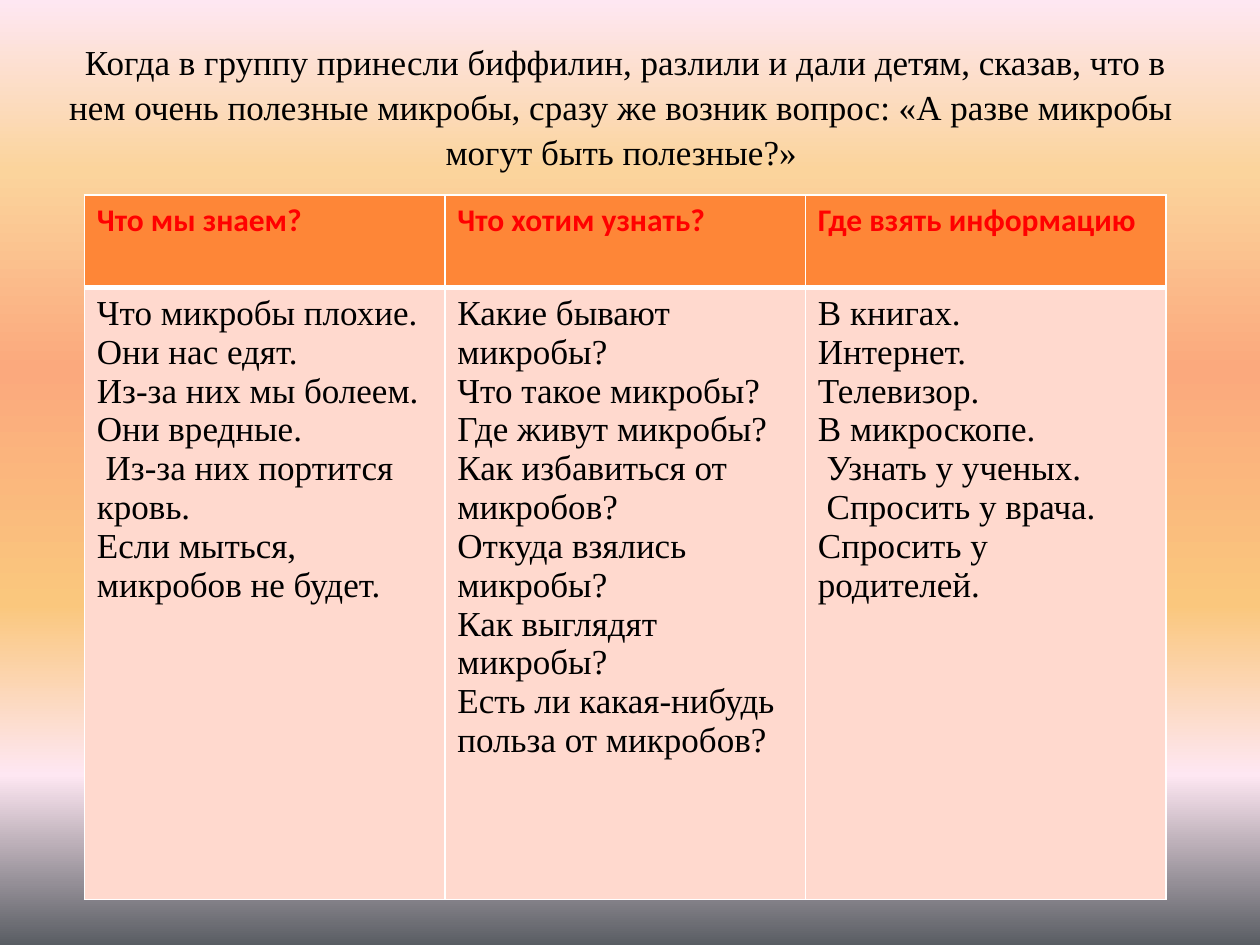
import pptx
import pptx.dml.color
import pptx.enum.text
import pptx.oxml
import pptx.oxml.ns
import pptx.util

Pt = pptx.util.Pt
qn = pptx.oxml.ns.qn

COLORS = {
    "black": "000000", "red": "FF0000", "white": "FFFFFF",
    "header": "FE8637", "body": "FFD9CE",
    "slate": "595D63", "pink": "FEE7F2", "gold": "FAC77D",
    "coral": "FBA97D", "sand": "FBD49C",
}
BACKGROUND = [(0, "slate"), (18, "pink"), (36, "gold"),
              (61, "coral"), (82, "sand"), (100, "pink")]
TITLE = ("Когда в группу принесли биффилин, разлили и дали детям, сказав, что в "
         "нем очень полезные микробы, сразу же возник вопрос: «А разве микробы "
         "могут быть полезные?»")
COLUMNS = {
    "Что мы знаем?": [
        "Что микробы плохие.", "Они нас едят.", "Из-за них мы болеем.",
        "Они вредные.", " Из-за них портится кровь.",
        "Если мыться, микробов не будет."],
    "Что хотим узнать?": [
        "Какие бывают микробы?", "Что такое микробы?", "Где живут микробы?",
        "Как избавиться от микробов?", "Откуда взялись микробы?",
        "Как выглядят микробы?", "Есть ли какая-нибудь польза от микробов?"],
    "Где взять информацию": [
        "В книгах.", "Интернет.", "Телевизор.", "В микроскопе.",
        " Узнать у ученых.", " Спросить у врача.", "Спросить у родителей."],
}


def rgb(color):
    return pptx.dml.color.RGBColor.from_string(COLORS[color])


class SlideBuilder:
    serif = "Times New Roman"
    sans = "Calibri"

    def __init__(self, slide):
        self.slide = slide

    def background(self, stops):
        """Fill the slide with a gradient that runs from bottom to top."""
        fill = self.slide.background.fill
        fill.gradient()
        fill.gradient_angle = 90
        stop_list = self.slide.element.find(".//" + qn("a:gsLst"))
        for old_stop in list(stop_list):
            stop_list.remove(old_stop)
        for percent, color in stops:
            stop_list.append(pptx.oxml.parse_xml(
                f'<a:gs {pptx.oxml.ns.nsdecls("a")} pos="{percent * 1000}">'
                f'<a:srgbClr val="{COLORS[color]}"/></a:gs>'))

    def run(self, paragraph, text, size, color, font, bold=False):
        run = paragraph.add_run()
        run.text = text
        run.font.size = Pt(size)
        run.font.name = font
        run.font.bold = bold
        run.font.color.rgb = rgb(color)

    def title(self, text, left, top, width, height):
        shape = self.slide.shapes.title
        shape.left, shape.top = Pt(left), Pt(top)
        shape.width, shape.height = Pt(width), Pt(height)
        frame = shape.text_frame
        frame.word_wrap = True
        frame.auto_size = pptx.enum.text.MSO_AUTO_SIZE.NONE
        frame.vertical_anchor = pptx.enum.text.MSO_ANCHOR.MIDDLE
        paragraph = frame.paragraphs[0]
        paragraph.alignment = pptx.enum.text.PP_ALIGN.CENTER
        paragraph.line_spacing = 1.08
        self.run(paragraph, " ", 20, "red", self.serif)
        self.run(paragraph, text, 20, "black", self.serif)

    def borders(self, cell, **widths):
        """Draw white borders; widths are keyed by side: L, R, T, B."""
        properties = cell._tc.get_or_add_tcPr()
        for index, (side, width) in enumerate(widths.items()):
            properties.insert(index, pptx.oxml.parse_xml(
                f'<a:ln{side} {pptx.oxml.ns.nsdecls("a")} w="{Pt(width)}">'
                f'<a:solidFill><a:srgbClr val="{COLORS["white"]}"/></a:solidFill>'
                f'</a:ln{side}>'))

    def cell(self, cell, lines, fill, **style):
        cell.fill.solid()
        cell.fill.fore_color.rgb = rgb(fill)
        frame = cell.text_frame
        for index, line in enumerate(lines):
            paragraph = frame.add_paragraph() if index else frame.paragraphs[0]
            self.run(paragraph, line, **style)

    def table(self, columns, left, top, column_width, row_heights):
        table = self.slide.shapes.add_table(
            len(row_heights), len(columns), Pt(left), Pt(top),
            Pt(column_width * len(columns)), Pt(sum(row_heights))).table
        for row, height in zip(table.rows, row_heights):
            row.height = Pt(height)
        for index, (heading, lines) in enumerate(columns.items()):
            table.columns[index].width = Pt(column_width)
            header, body = table.cell(0, index), table.cell(1, index)
            self.cell(header, [heading], "header", size=18, color="red",
                      font=self.sans, bold=True)
            self.cell(body, lines, "body", size=20, color="black", font=self.serif)
            self.borders(header, L=1, R=1, T=1, B=3)
            self.borders(body, L=1, R=1, T=3, B=1)


def main():
    presentation = pptx.Presentation()
    presentation.slide_width, presentation.slide_height = Pt(720), Pt(540)
    title_only = presentation.slide_layouts[5]
    builder = SlideBuilder(presentation.slides.add_slide(title_only))
    builder.background(BACKGROUND)
    builder.title(TITLE, 31, 15, 648, 90)
    builder.table(COLUMNS, 48.2, 111.5, 206, [53, 349.5])
    presentation.save("out.pptx")


if __name__ == "__main__":
    main()
